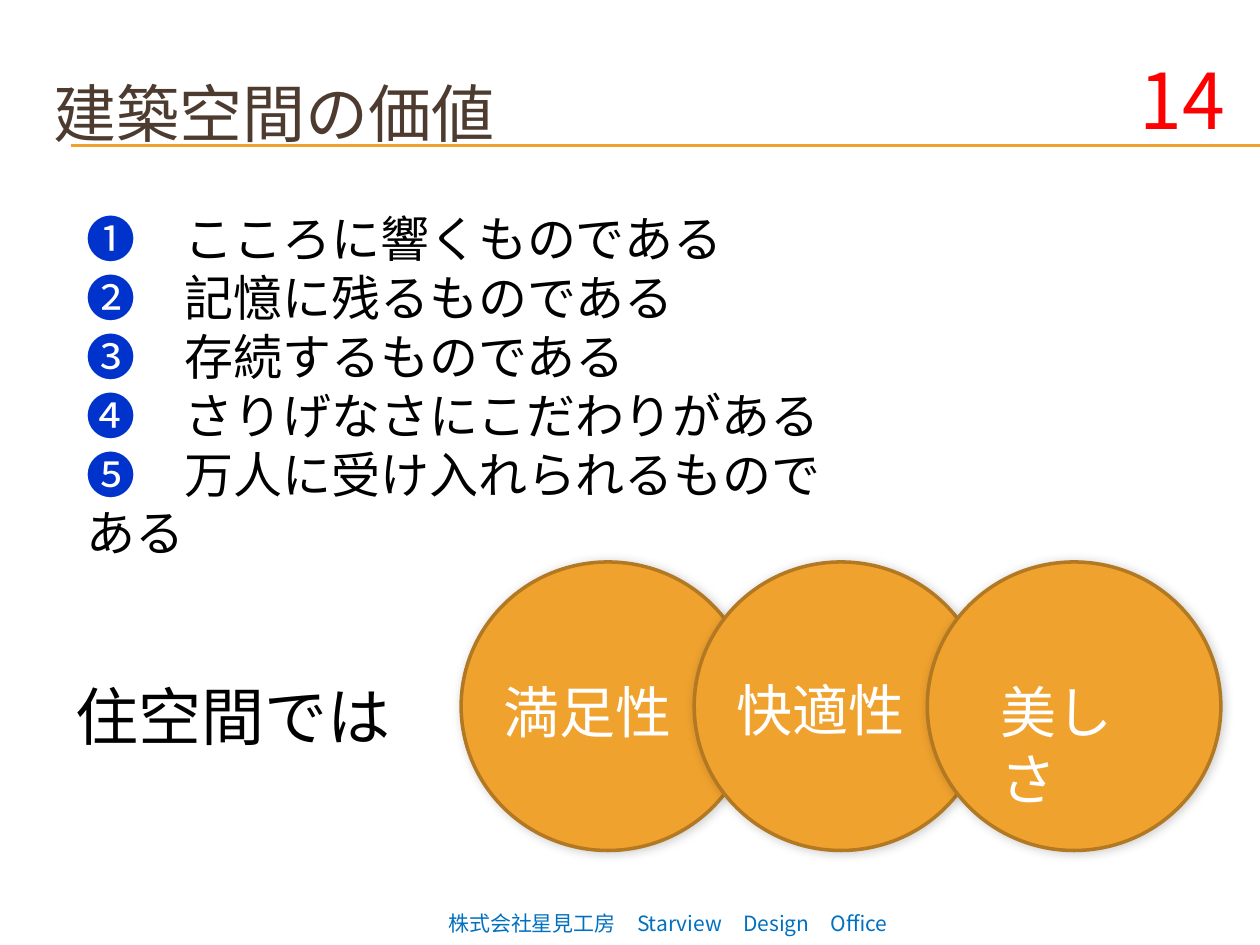
"""Build a slide on the value of architectural space."""
from lxml import etree
from pptx import Presentation, util as u
from pptx.dml.color import RGBColor
from pptx.enum import shapes, text
from pptx.oxml.ns import qn

FONT = "Noto Sans CJK JP"
COLORS = {
    "title": "4E3B30", "body": "000000", "marker": "0033CC", "white": "FFFFFF",
    "orange": "F0A22E", "outline": "B27822", "footer": "0070C0", "number": "FF0000",
}
TITLE = "建築空間の価値"
VALUES = [
    ("➊", "こころに響くものである"),
    ("❷", "記憶に残るものである"),
    ("❸", "存続するものである"),
    ("❹", "さりげなさにこだわりがある"),
    ("❺", "万人に受け入れられるものである"),
]
HOME = "住空間では"
QUALITIES = [
    ("満足性", (3.9, 5.33, 1.55, 0.64)),
    ("快適性", (5.75, 5.31, 1.55, 0.64)),
    ("美しさ", (7.84, 5.33, 1.32, 0.64)),
]
FOOTER = "株式会社星見工房\u3000Starview\u3000Design\u3000Office"
NUMBER = "14"
RULE_HEIGHTS = (1.15, 1.16)
CIRCLE_LEFT, CIRCLE_TOP, CIRCLE_STEP = 3.66, 4.46, 1.85
CIRCLE_SIZE = (2.33, 2.29)


def color(name):
    return RGBColor.from_string(COLORS[name])


def inches(*lengths):
    return [u.Inches(length) for length in lengths]


def add_text(slide, box, lines, size, align=text.PP_ALIGN.LEFT,
             anchor=text.MSO_ANCHOR.TOP):
    frame = slide.shapes.add_textbox(*inches(*box)).text_frame
    frame.word_wrap = True
    frame.vertical_anchor = anchor
    for index, parts in enumerate(lines):
        paragraph = frame.paragraphs[0] if index == 0 else frame.add_paragraph()
        paragraph.alignment = align
        paragraph.line_spacing = u.Pt(size * 1.2)
        paragraph.font.size = u.Pt(size)
        if len(parts) == 1:
            paragraph.font.color.rgb = color(parts[0][1])
        paragraph.font.name = FONT
        defaults = paragraph._p.pPr.find(qn("a:defRPr"))
        etree.SubElement(defaults, qn("a:ea"), typeface=FONT)
        for words, tint in parts:
            run = paragraph.add_run()
            run.text = words
            if len(parts) > 1:
                run.font.color.rgb = color(tint)


def add_rule(slide, height):
    rule = slide.shapes.add_connector(
        shapes.MSO_CONNECTOR.STRAIGHT, *inches(0.56, height, 10, height))
    rule.line.color.rgb = color("orange")
    rule.line.width = u.Pt(0.75)
    etree.SubElement(rule._element.spPr, qn("a:effectLst"))


def add_circle(slide, left):
    circle = slide.shapes.add_shape(
        shapes.MSO_SHAPE.OVAL, *inches(left, CIRCLE_TOP, *CIRCLE_SIZE))
    circle.fill.solid()
    circle.fill.fore_color.rgb = color("orange")
    circle.line.color.rgb = color("outline")
    circle.line.width = u.Pt(2)
    circle.shadow.inherit = False
    effects = circle._element.spPr.find(qn("a:effectLst"))
    shadow = etree.SubElement(
        effects, qn("a:outerShdw"), blurRad=str(u.Pt(6)), dist=str(u.Pt(1)),
        dir=str(45 * 60000), rotWithShape="0")
    tint = etree.SubElement(shadow, qn("a:srgbClr"), val=COLORS["body"])
    etree.SubElement(tint, qn("a:alpha"), val="20000")


def main():
    deck = Presentation()
    deck.slide_width, deck.slide_height = inches(10, 7.5)
    slide = deck.slides.add_slide(deck.slide_layouts[6])

    for height in RULE_HEIGHTS:
        add_rule(slide, height)
    add_text(slide, (0.33, 0.43, 9.5, 0.92), [[(TITLE, "title")]], 36,
             anchor=text.MSO_ANCHOR.MIDDLE)
    values = [[(marker, "marker"), ("\u3000" + value, "body")]
              for marker, value in VALUES]
    add_text(slide, (0.59, 1.61, 6.17, 2.46), values, 28)
    add_text(slide, (0.5, 5.33, 2.73, 0.71), [[(HOME, "body")]], 36)

    for index in range(len(QUALITIES)):
        add_circle(slide, CIRCLE_LEFT + index * CIRCLE_STEP)
    for quality, box in QUALITIES:
        add_text(slide, box, [[(quality, "white")]], 32)

    add_text(slide, (3.02, 7.18, 4.12, 0.32), [[(FOOTER, "footer")]], 12,
             text.PP_ALIGN.RIGHT)
    add_text(slide, (8.67, 0.37, 1.15, 0.27), [[(NUMBER, "number")]], 44,
             text.PP_ALIGN.RIGHT)
    deck.save("out.pptx")


if __name__ == "__main__":
    main()
